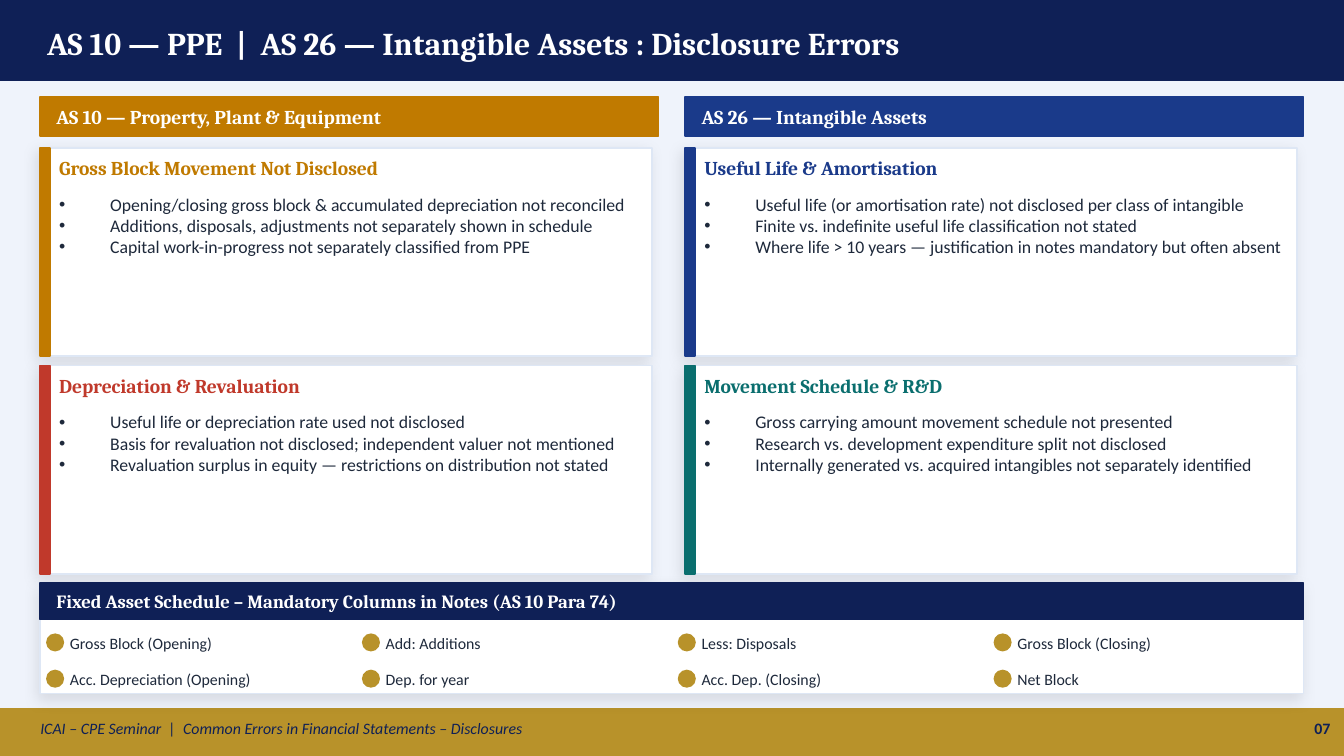
"""Build the AS 10 and AS 26 disclosure errors slide."""
from dataclasses import dataclass

import pptx
import pptx.dml.color
import pptx.enum.shapes
import pptx.enum.text
import pptx.oxml
import pptx.oxml.ns
import pptx.shapes.autoshape
import pptx.slide
import pptx.text.text
import pptx.util
from lxml import etree
from pptx.dml.color import RGBColor
from pptx.enum.shapes import MSO_SHAPE
from pptx.enum.text import MSO_ANCHOR, MSO_AUTO_SIZE, PP_ALIGN
from pptx.util import Inches

NAVY = RGBColor(0x0F, 0x20, 0x56)
GOLD = RGBColor(0xB8, 0x92, 0x2A)
AMBER = RGBColor(0xC0, 0x7A, 0x00)
RED = RGBColor(0xC0, 0x39, 0x2B)
BLUE = RGBColor(0x1A, 0x3A, 0x8A)
TEAL = RGBColor(0x0A, 0x6E, 0x6E)
INK = RGBColor(0x1E, 0x29, 0x3B)
WHITE = RGBColor(0xFF, 0xFF, 0xFF)
PALE = RGBColor(0xEF, 0xF3, 0xFB)
BORDER = RGBColor(0xDE, 0xE7, 0xF5)

HEADING_FONT = "Cambria"
BODY_FONT = "Calibri"
COMPARISON_LAYOUT = 4
SLIDE_WIDTH = 10
SLIDE_HEIGHT = SLIDE_WIDTH * 9 / 16
FOOTER_HEIGHT = 0.35
CARD_TOP, CARD_PITCH, CARD_HEIGHT = 1.1, 1.62, 1.55
SCHEDULE_COLUMNS, SCHEDULE_PITCH = 4, 2.35

SHADOW = (
    f'<a:effectLst {pptx.oxml.ns.nsdecls("a")}>'
    '<a:outerShdw blurRad="101600" dist="38100" dir="8100000" algn="bl" rotWithShape="0">'
    '<a:srgbClr val="000000"><a:alpha val="10000"/></a:srgbClr>'
    "</a:outerShdw></a:effectLst>"
)


@dataclass(frozen=True)
class Box:
    left: float
    top: float
    width: float
    height: float


@dataclass(frozen=True)
class Style:
    size: float
    color: RGBColor
    name: str = BODY_FONT
    bold: bool = False
    italic: bool = False


@dataclass(frozen=True)
class Card:
    heading: str
    color: RGBColor
    bullets: tuple[str, ...]


@dataclass(frozen=True)
class Column:
    left: float
    heading: str
    color: RGBColor
    cards: tuple[Card, ...]


COLUMNS = (
    Column(0.3, "AS 10 — Property, Plant & Equipment", AMBER, (
        Card("Gross Block Movement Not Disclosed", AMBER, (
            "Opening/closing gross block & accumulated depreciation not reconciled",
            "Additions, disposals, adjustments not separately shown in schedule",
            "Capital work-in-progress not separately classified from PPE")),
        Card("Depreciation & Revaluation", RED, (
            "Useful life or depreciation rate used not disclosed",
            "Basis for revaluation not disclosed; independent valuer not mentioned",
            "Revaluation surplus in equity — restrictions on distribution not stated")))),
    Column(5.1, "AS 26 — Intangible Assets", BLUE, (
        Card("Useful Life & Amortisation", BLUE, (
            "Useful life (or amortisation rate) not disclosed per class of intangible",
            "Finite vs. indefinite useful life classification not stated",
            "Where life > 10 years — justification in notes mandatory but often absent")),
        Card("Movement Schedule & R&D", TEAL, (
            "Gross carrying amount movement schedule not presented",
            "Research vs. development expenditure split not disclosed",
            "Internally generated vs. acquired intangibles not separately identified")))),
)
SCHEDULE_ITEMS = (
    "Gross Block (Opening)", "Add: Additions", "Less: Disposals", "Gross Block (Closing)",
    "Acc. Depreciation (Opening)", "Dep. for year", "Acc. Dep. (Closing)", "Net Block",
)


def place(shape, box: Box) -> None:
    shape.left, shape.top = Inches(box.left), Inches(box.top)
    shape.width, shape.height = Inches(box.width), Inches(box.height)


def add_block(slide: pptx.slide.Slide, box: Box, fill: RGBColor, line: RGBColor | None = None,
              kind: MSO_SHAPE = MSO_SHAPE.RECTANGLE) -> pptx.shapes.autoshape.Shape:
    shape = slide.shapes.add_shape(kind, 0, 0, 0, 0)
    place(shape, box)
    shape.shadow.inherit = False
    shape.fill.solid()
    shape.fill.fore_color.rgb = fill
    shape.line.color.rgb = line or fill
    shape.line.width = pptx.util.Pt(1)
    return shape


def add_panel(slide: pptx.slide.Slide, box: Box) -> None:
    properties = add_block(slide, box, WHITE, BORDER).element.spPr
    properties.remove(properties.find(pptx.oxml.ns.qn("a:effectLst")))
    properties.append(pptx.oxml.parse_xml(SHADOW))


def format_frame(frame: pptx.text.text.TextFrame, anchor: MSO_ANCHOR) -> None:
    frame.word_wrap = True
    frame.auto_size = MSO_AUTO_SIZE.NONE
    frame.vertical_anchor = anchor
    frame.margin_left = frame.margin_top = frame.margin_right = frame.margin_bottom = 0


def apply_style(paragraph, style: Style) -> None:
    font = paragraph.font
    font.name, font.size = style.name, pptx.util.Pt(style.size)
    font.bold, font.italic = style.bold, style.italic
    font.color.rgb = style.color


def fill_line(shape, box: Box, text: str, style: Style, anchor: MSO_ANCHOR = MSO_ANCHOR.MIDDLE,
              alignment: PP_ALIGN = PP_ALIGN.LEFT) -> None:
    place(shape, box)
    format_frame(shape.text_frame, anchor)
    paragraph = shape.text_frame.paragraphs[0]
    paragraph.text = text
    paragraph.alignment = alignment
    apply_style(paragraph, style)


def add_line(slide: pptx.slide.Slide, box: Box, text: str, style: Style,
             anchor: MSO_ANCHOR = MSO_ANCHOR.MIDDLE,
             alignment: PP_ALIGN = PP_ALIGN.LEFT) -> None:
    fill_line(slide.shapes.add_textbox(0, 0, 0, 0), box, text, style, anchor, alignment)


def bring_to_front(shape) -> None:
    shape.element.getparent().append(shape.element)


def fill_list(placeholder, box: Box, bullets: tuple[str, ...]) -> None:
    bring_to_front(placeholder)
    place(placeholder, box)
    frame = placeholder.text_frame
    frame.text = "\n".join(bullets)
    format_frame(frame, MSO_ANCHOR.TOP)
    for paragraph in frame.paragraphs:
        paragraph.space_before = pptx.util.Pt(0)
        properties = paragraph._p.get_or_add_pPr()
        properties.set("marL", str(Inches(0.38)))
        properties.set("indent", str(Inches(-0.38)))
        etree.SubElement(properties, pptx.oxml.ns.qn("a:buChar"), char="•")
        apply_style(paragraph, Style(9.5, INK))


def draw_card(slide: pptx.slide.Slide, card: Card, left: float, top: float, placeholder) -> None:
    add_panel(slide, Box(left, top, 4.55, CARD_HEIGHT))
    add_block(slide, Box(left, top, 0.07, CARD_HEIGHT), card.color)
    add_line(slide, Box(left + 0.14, top + 0.06, 4.35, 0.26), card.heading,
             Style(10.5, card.color, HEADING_FONT, bold=True), MSO_ANCHOR.TOP)
    fill_list(placeholder, Box(left + 0.14, top + 0.34, 4.35, 1.13), card.bullets)


def draw_columns(slide: pptx.slide.Slide) -> None:
    placeholders = iter([item for item in slide.placeholders if 1 <= item.placeholder_format.idx <= 4])
    for column in COLUMNS:
        add_block(slide, Box(column.left, 0.72, 4.6, 0.29), column.color)
        add_line(slide, Box(column.left + 0.12, 0.73, 4.4, 0.27), column.heading,
                 Style(10.5, WHITE, HEADING_FONT, bold=True))
        for row, card in enumerate(column.cards):
            draw_card(slide, card, column.left, CARD_TOP + row * CARD_PITCH, next(placeholders))


def draw_schedule(slide: pptx.slide.Slide) -> None:
    add_panel(slide, Box(0.3, 4.34, 9.4, 0.82))
    add_block(slide, Box(0.3, 4.34, 9.4, 0.27), NAVY)
    add_line(slide, Box(0.42, 4.35, 9.1, 0.25),
             "Fixed Asset Schedule – Mandatory Columns in Notes (AS 10 Para 74)",
             Style(10, WHITE, HEADING_FONT, bold=True))
    for index, item in enumerate(SCHEDULE_ITEMS):
        row, column = divmod(index, SCHEDULE_COLUMNS)
        left, top = 0.35 + column * SCHEDULE_PITCH, 4.65 + row * 0.27
        add_block(slide, Box(left, top + 0.07, 0.12, 0.12), GOLD, kind=MSO_SHAPE.OVAL)
        add_line(slide, Box(left + 0.17, top, 2.1, 0.27), item, Style(8.5, INK))


def main() -> None:
    presentation = pptx.Presentation()
    presentation.slide_width = Inches(SLIDE_WIDTH)
    presentation.slide_height = Inches(SLIDE_HEIGHT)
    slide = presentation.slides.add_slide(presentation.slide_layouts[COMPARISON_LAYOUT])
    add_block(slide, Box(0, 0, SLIDE_WIDTH, SLIDE_HEIGHT), PALE)
    add_block(slide, Box(0, 0, SLIDE_WIDTH, 0.6), NAVY)
    add_block(slide, Box(0, SLIDE_HEIGHT - FOOTER_HEIGHT, SLIDE_WIDTH, FOOTER_HEIGHT), GOLD)
    bring_to_front(slide.shapes.title)
    fill_line(slide.shapes.title, Box(0.35, 0.08, 9.3, 0.47),
              "AS 10 — PPE  |  AS 26 — Intangible Assets : Disclosure Errors",
              Style(17, WHITE, HEADING_FONT, bold=True))
    draw_columns(slide)
    draw_schedule(slide)
    add_line(slide, Box(0.3, 5.28, 8.8, 0.27),
             "ICAI – CPE Seminar  |  Common Errors in Financial Statements – Disclosures",
             Style(8.5, NAVY, italic=True))
    add_line(slide, Box(9.5, 5.28, 0.4, 0.27), "07", Style(8.5, NAVY, bold=True),
             alignment=PP_ALIGN.RIGHT)
    presentation.save("out.pptx")


if __name__ == "__main__":
    main()
